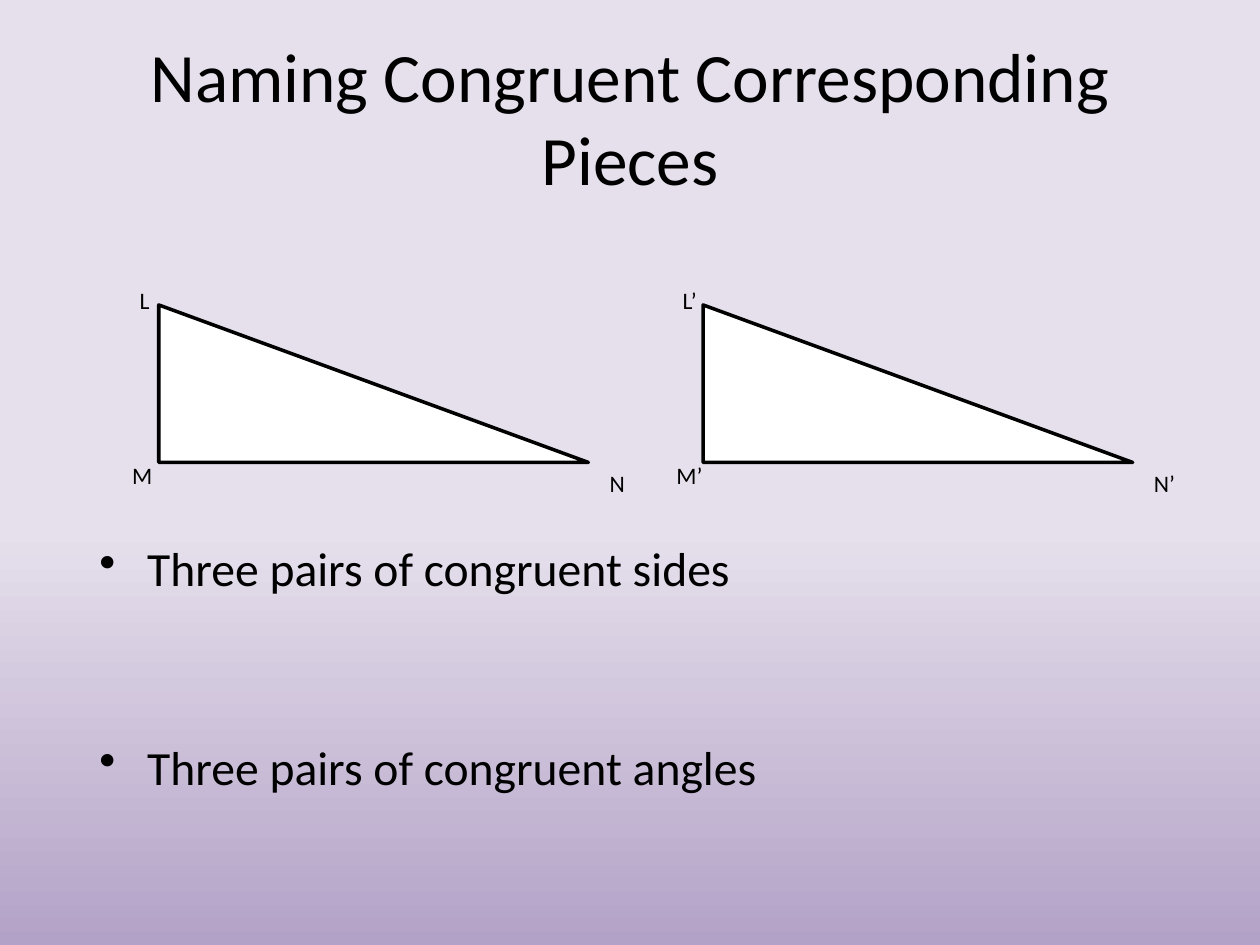
from copy import deepcopy

from lxml import etree
from pptx import Presentation
from pptx.dml.color import RGBColor
from pptx.enum.shapes import MSO_SHAPE
from pptx.enum.text import MSO_ANCHOR, MSO_AUTO_SIZE, PP_ALIGN
from pptx.oxml.ns import qn
from pptx.util import Inches, Pt

BLACK = RGBColor(0x00, 0x00, 0x00)
WHITE = RGBColor(0xFF, 0xFF, 0xFF)
LAVENDER = RGBColor(0xE6, 0xE0, 0xEC)
PURPLE = RGBColor(0xB3, 0xA2, 0xC7)
RIGHT_TRIANGLE = MSO_SHAPE.RIGHT_TRIANGLE
MIDDLE = MSO_ANCHOR.MIDDLE
CENTER = PP_ALIGN.CENTER
FIT_SHAPE = MSO_AUTO_SIZE.SHAPE_TO_FIT_TEXT


class SlideBuilder:
    font = "Calibri"

    def __init__(self, slide):
        self.slide = slide

    def background(self, stops):
        fill = self.slide.background.fill
        fill.gradient()
        fill.gradient_angle = 270
        first = fill._fill._gradFill.find(qn("a:gsLst"))[0]
        first.addnext(deepcopy(first))
        for stop, (position, color) in zip(fill.gradient_stops, stops):
            stop.position = position
            stop.color.rgb = color

    def style(self, p, size):
        p.font.name = self.font
        p.font.size = Pt(size)
        p.font.color.rgb = BLACK

    def text(self, shapes, text, box, size, wrap=True):
        sp = shapes.add_textbox(*map(Inches, box))
        tf = sp.text_frame
        tf.word_wrap = wrap
        tf.text = text
        for p in tf.paragraphs:
            self.style(p, size)
        return tf

    def title(self, text, box):
        tf = self.text(self.slide.shapes, text, box, 39.6)
        tf.vertical_anchor = MIDDLE
        tf.paragraphs[0].alignment = CENTER

    def triangle(self, left, top, labels):
        group = self.slide.shapes.add_group_shape()
        sp = group.shapes.add_shape(RIGHT_TRIANGLE, Inches(left), Inches(top),
                                    Inches(3.41), Inches(1.25))
        sp.shadow.inherit = False
        sp.fill.solid()
        sp.fill.fore_color.rgb = WHITE
        sp.line.color.rgb = BLACK
        sp.line.width = Pt(2)
        for name, dx, dy, width in labels:
            box = (left + dx, top + dy, width, 0.33)
            tf = self.text(group.shapes, name, box, 13.5, wrap=False)
            tf.auto_size = FIT_SHAPE

    def bullets(self, items, box, gap):
        tf = self.text(self.slide.shapes, "\n".join(items), box, 27.2)
        for i, p in enumerate(tf.paragraphs):
            p.space_before = Pt(gap if i else 0)
            pPr = p._p.get_or_add_pPr()
            pPr.set("marL", str(Inches(0.38)))
            pPr.set("indent", str(-Inches(0.38)))
            bullet = etree.Element(qn("a:buChar"), char="•")
            pPr.find(qn("a:defRPr")).addprevious(bullet)


def main():
    prs = Presentation()
    prs.slide_width, prs.slide_height = Inches(10), Inches(7.5)
    s = SlideBuilder(prs.slides.add_slide(prs.slide_layouts[6]))

    # Background and title
    s.background([(0, LAVENDER), (0.56, LAVENDER), (1, PURPLE)])
    s.title("Naming Congruent Corresponding Pieces", (0.5, 0.3, 9, 1.25))

    # Triangle and its congruent partner: label, offset from triangle, width
    s.triangle(1.26, 2.42, [("L", -0.25, -0.2, 0.28),
                            ("N", 3.48, 1.25, 0.32),
                            ("M", -0.31, 1.19, 0.36)])
    s.triangle(5.58, 2.42, [("L’", -0.26, -0.2, 0.31),
                            ("N’", 3.48, 1.25, 0.37),
                            ("M’", -0.31, 1.19, 0.41)])

    # Bullets, with room to write between them
    s.bullets(["Three pairs of congruent sides",
               "Three pairs of congruent angles"],
              (0.69, 4.23, 8.62, 1.91), gap=81)

    prs.save("out.pptx")


if __name__ == "__main__":
    main()
